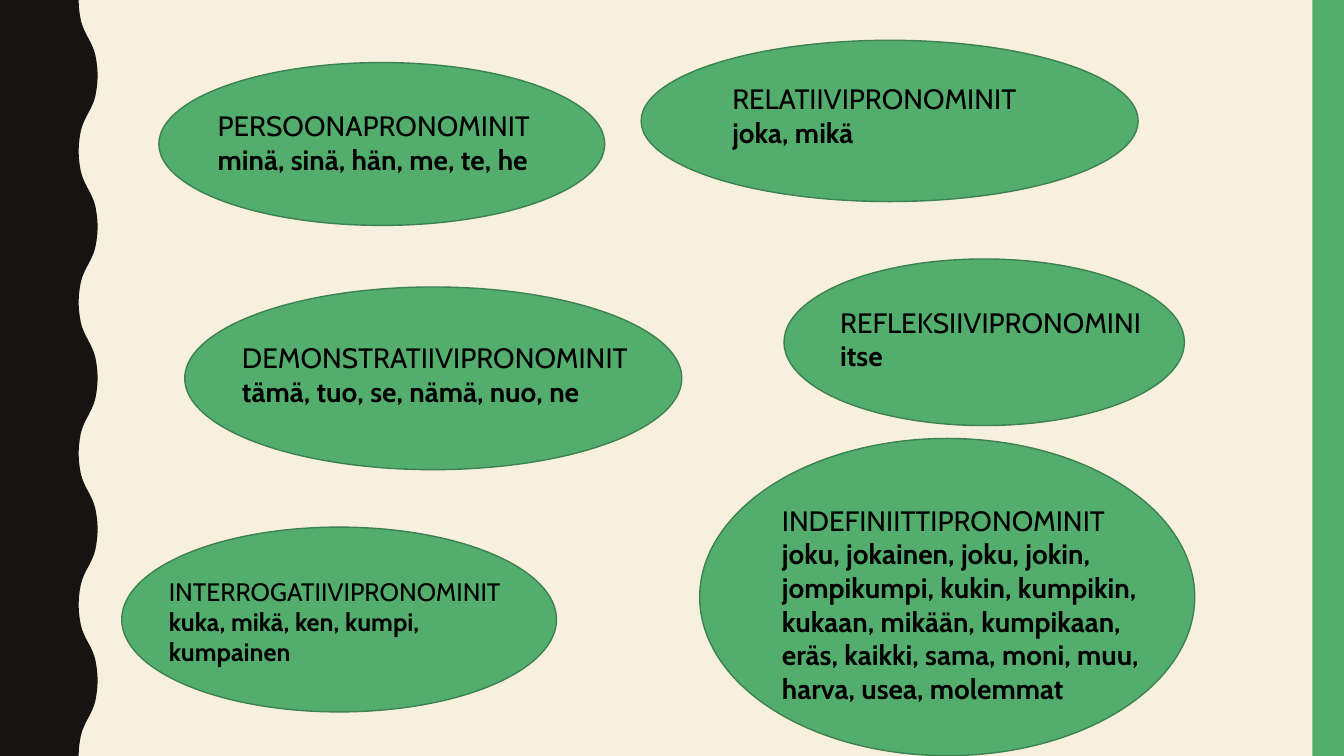
from pptx import Presentation
from pptx.dml.color import RGBColor
from pptx.enum.shapes import MSO_SHAPE as Preset
from pptx.enum.text import MSO_AUTO_SIZE as AutoSize
from pptx.util import Pt

WIDTH, HEIGHT = 960, 540
COLORS = {
    "background": "F7F0DF",
    "wave": "171312",
    "green": "53AE6E",
    "outline": "3D8151",
    "text": "000000",
}

# Half a wave of the left edge, from trough to crest
WAVE_X = [56.2, 56.4, 57, 57.8, 58.8, 60, 61.4, 63,
          64.6, 66, 67.2, 68.2, 69, 69.6, 69.8]
WAVE_Y = [0, 5, 10, 14.5, 18, 21, 24, 27, 30, 33, 36, 39.5, 44, 49, 54]
HALF_WAVES = 10

# Heading, pronouns, oval box, text box, font size
PRONOUN_GROUPS = [
    ("PERSOONAPRONOMINIT", "minä, sinä, hän, me, te, he",
     (113.5, 44.7, 318.5, 116.3), (148.4, 74.2, 249, 55.7), 20),
    ("DEMONSTRATIIVIPRONOMINIT", "tämä, tuo, se, nämä, nuo, ne",
     (132, 205, 355, 130.5), (165.8, 239.9, 302, 55.7), 20),
    ("INTERROGATIIVIPRONOMINIT", "kuka, mikä, ken, kumpi, kumpainen",
     (87, 376.5, 310.5, 132), (113.5, 408, 273, 72.7), 18),
    ("RELATIIVIPRONOMINIT", "joka, mikä",
     (458, 28.8, 355, 115.2), (516, 55, 247, 55.7), 20),
    ("REFLEKSIIVIPRONOMINI", "itse",
     (560, 185, 286, 119), (593, 214.4, 233.5, 55.7), 20),
    ("INDEFINIITTIPRONOMINIT",
     "joku, jokainen, joku, jokin, jompikumpi, kukin, kumpikin, kukaan, "
     "mikään, kumpikaan, eräs, kaikki, sama, moni, muu, harva, usea, molemmat",
     (499.8, 313.2, 353.6, 226.6), (551.4, 356, 294.5, 152.7), 20),
]


class SlideBuilder:
    def __init__(self, slide, font_name="Cabin"):
        self.slide = slide
        self.font_name = font_name

    def color(self, name):
        return RGBColor.from_string(COLORS[name])

    def background(self, name):
        fill = self.slide.background.fill
        fill.solid()
        fill.fore_color.rgb = self.color(name)

    def paint(self, shape, fill, outline=None):
        shape.shadow.inherit = False
        shape.fill.solid()
        shape.fill.fore_color.rgb = self.color(fill)
        if outline:
            shape.line.color.rgb = self.color(outline)
            shape.line.width = Pt(1)
        else:
            shape.line.fill.background()

    def preset(self, kind, box, fill, outline=None):
        shape = self.slide.shapes.add_shape(kind, *map(Pt, box))
        self.paint(shape, fill, outline)

    def wavy_band(self, fill):
        """Fill the left side up to a wave that mirrors every second half."""
        edge = []
        for half in range(HALF_WAVES):
            xs = WAVE_X if half % 2 == 0 else WAVE_X[::-1]
            top = half * WAVE_Y[-1]
            edge += [(Pt(x), Pt(top + y)) for x, y in zip(xs, WAVE_Y)]
        outline = self.slide.shapes.build_freeform(0, 0)
        outline.add_line_segments(edge + [(0, Pt(HEIGHT))], close=True)
        self.paint(outline.convert_to_shape(), fill)

    def text(self, heading, pronouns, box, size):
        frame = self.slide.shapes.add_textbox(*map(Pt, box)).text_frame
        frame.word_wrap = True
        frame.auto_size = AutoSize.SHAPE_TO_FIT_TEXT
        frame.text = f"{heading}\n{pronouns}"
        for paragraph, bold in zip(frame.paragraphs, (False, True)):
            font = paragraph.font
            font.name = self.font_name
            font.size = Pt(size)
            font.bold = bold
            font.color.rgb = self.color("text")


def main():
    deck = Presentation()
    deck.slide_width, deck.slide_height = Pt(WIDTH), Pt(HEIGHT)
    builder = SlideBuilder(deck.slides.add_slide(deck.slide_layouts[6]))

    builder.background("background")
    builder.wavy_band("wave")
    builder.preset(Preset.RECTANGLE, (937.5, 0, 22.5, HEIGHT), "green")
    for heading, pronouns, oval_box, text_box, size in PRONOUN_GROUPS:
        builder.preset(Preset.OVAL, oval_box, "green", "outline")
        builder.text(heading, pronouns, text_box, size)

    deck.save("out.pptx")


if __name__ == "__main__":
    main()
